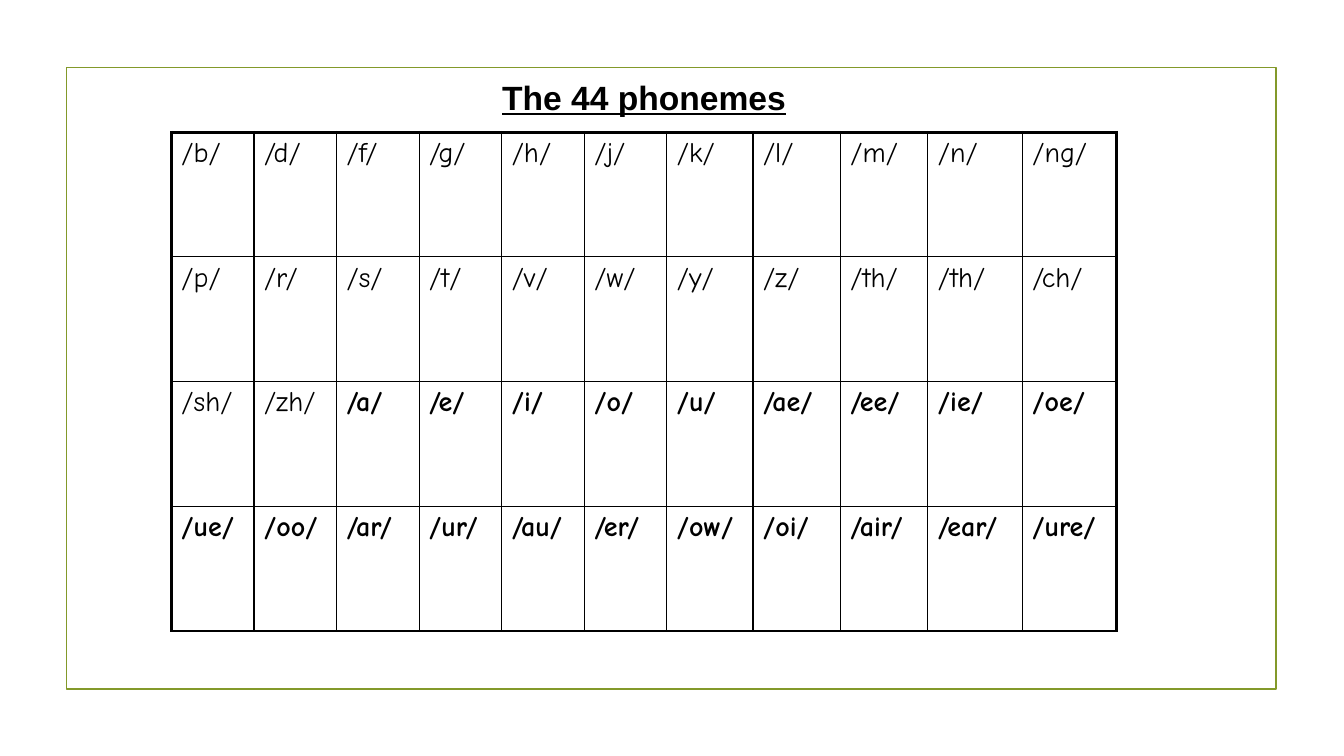
from collections import namedtuple
from dataclasses import dataclass

from lxml.etree import SubElement
from pptx import Presentation
from pptx.dml.color import RGBColor
from pptx.enum.shapes import MSO_SHAPE
from pptx.enum.text import MSO_AUTO_SIZE, PP_ALIGN
from pptx.oxml.ns import qn
from pptx.util import Pt

Box = namedtuple("Box", "left top width height")


@dataclass(frozen=True)
class Theme:
    """Colours, fonts, type sizes and line widths of the slide."""
    ink: str = "000000"
    frame: str = "83992A"
    title_font: str = "Arial"
    table_font: str = "Comic Neue"
    title_size: float = 24
    table_size: float = 20
    frame_line: float = 1.25
    inner_line: float = 1
    outer_line: float = 2.25


THEME = Theme()
CONSONANTS = "b d f g h j k l m n ng p r s t v w y z th th ch sh zh".split()
VOWELS = "a e i o u ae ee ie oe ue oo ar ur au er ow oi air ear ure".split()
ROWS = 4
COLUMN_WIDTHS = [59] * 6 + [61.5] + [62.5] * 2 + [67.5] * 2


def write_text(text_frame, text, *, font, size, bold=False, underline=False, align=PP_ALIGN.LEFT):
    """Write one formatted paragraph into a text frame."""
    para = text_frame.paragraphs[0]
    para.alignment = align
    span = para.add_run()
    span.text = text
    span.font.name = font
    span.font.size = Pt(size)
    span.font.bold = bold
    span.font.underline = underline
    span.font.color.rgb = RGBColor.from_string(THEME.ink)


def set_border(cell, side, width):
    """Draw a solid line along one side (L, R, T or B) of a cell."""
    properties = cell._tc.get_or_add_tcPr()
    line = SubElement(properties, qn(f"a:ln{side}"), w=str(Pt(width)))
    fill = SubElement(line, qn("a:solidFill"))
    SubElement(fill, qn("a:srgbClr"), val=THEME.ink)


def add_frame(page, box):
    """Draw the thin frame around the page content."""
    frame = page.shapes.add_shape(MSO_SHAPE.RECTANGLE, *map(Pt, box))
    frame.shadow.inherit = False
    frame.fill.background()
    frame.line.color.rgb = RGBColor.from_string(THEME.frame)
    frame.line.width = Pt(THEME.frame_line)


def add_title(page, box):
    """Place the underlined heading centred in its box."""
    title = page.shapes.add_textbox(*map(Pt, box))
    title.text_frame.word_wrap = False
    title.text_frame.auto_size = MSO_AUTO_SIZE.SHAPE_TO_FIT_TEXT
    write_text(title.text_frame, "The 44 phonemes", font=THEME.title_font,
               size=THEME.title_size, bold=True, underline=True, align=PP_ALIGN.CENTER)


def add_phoneme_table(page, box):
    """Fill the grid with consonants, then vowels in bold."""
    columns = len(COLUMN_WIDTHS)
    table = page.shapes.add_table(ROWS, columns, *map(Pt, box)).table
    table.first_row = table.horz_banding = False
    for column, width in zip(table.columns, COLUMN_WIDTHS):
        column.width = Pt(width)
    for row in table.rows:
        row.height = Pt(box.height / ROWS)
    for index, phoneme in enumerate(CONSONANTS + VOWELS):
        row, column = divmod(index, columns)
        cell = table.cell(row, column)
        outer_sides = {"L": column == 0, "R": column == columns - 1,
                       "T": row == 0, "B": row == ROWS - 1}
        for side, is_outer in outer_sides.items():
            set_border(cell, side, THEME.outer_line if is_outer else THEME.inner_line)
        cell.fill.background()
        write_text(cell.text_frame, f"/{phoneme}/", font=THEME.table_font,
                   size=THEME.table_size, bold=index >= len(CONSONANTS))


def main():
    """Build and save the slide."""
    deck = Presentation()
    deck.slide_width, deck.slide_height = Pt(960), Pt(540)
    page = deck.slides.add_slide(deck.slide_layouts[6])
    add_frame(page, Box(47.5, 48.25, 864, 444))
    add_phoneme_table(page, Box(122.4, 94.4, sum(COLUMN_WIDTHS), 356.4))
    add_title(page, Box(350.6, 51.1, 219, 36))
    deck.save("out.pptx")


if __name__ == "__main__":
    main()
